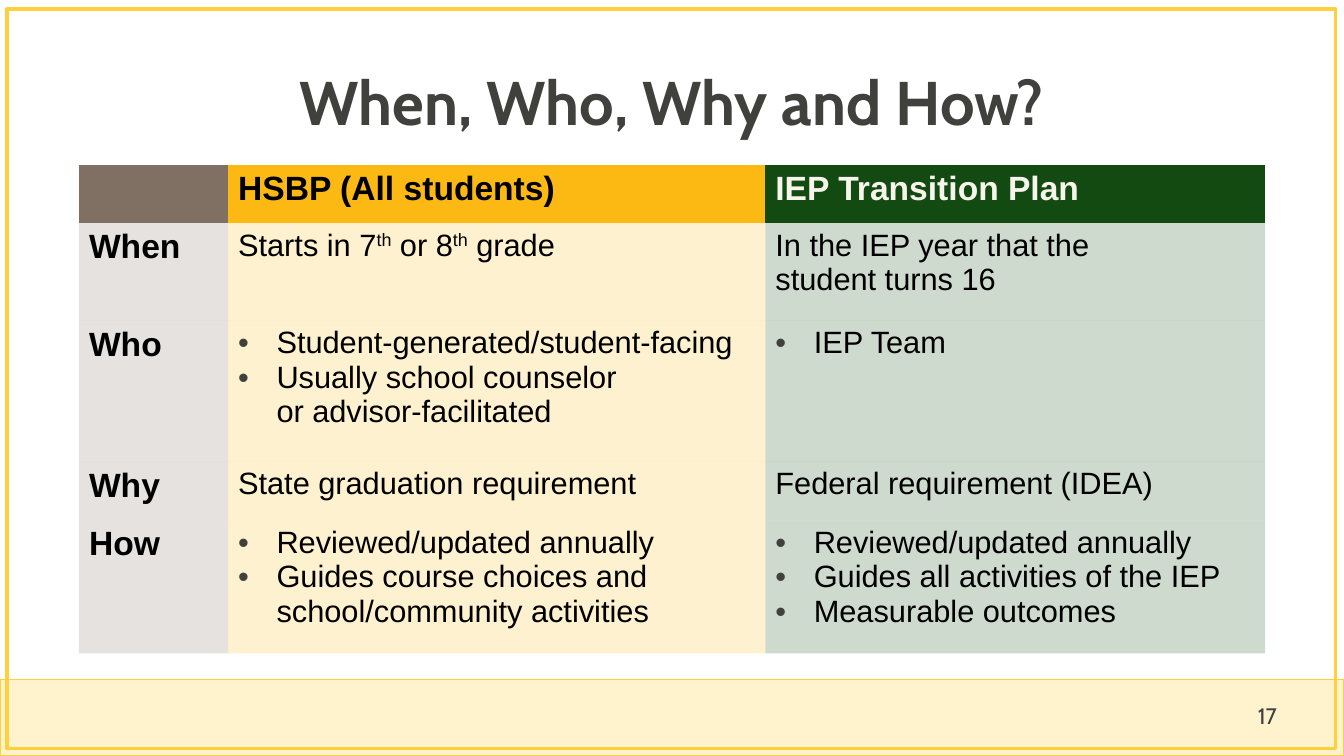
from lxml import etree
from pptx import Presentation
from pptx.dml.color import RGBColor
from pptx.enum.shapes import MSO_SHAPE
from pptx.enum.text import MSO_ANCHOR, PP_ALIGN
from pptx.oxml.ns import qn
from pptx.util import Pt

RECTANGLE = MSO_SHAPE.RECTANGLE
MIDDLE = MSO_ANCHOR.MIDDLE
CENTER, LEFT = PP_ALIGN.CENTER, PP_ALIGN.LEFT

GOLD_LINE = RGBColor(0xFF, 0xCF, 0x3C)
PALE_GOLD = RGBColor(0xFF, 0xF3, 0xCD)
CHARCOAL = RGBColor(0x40, 0x40, 0x3D)
BLACK = RGBColor(0, 0, 0)
IVORY = RGBColor(0xF7, 0xF5, 0xEB)
TAUPE = RGBColor(0x80, 0x70, 0x64)
AMBER = RGBColor(0xFD, 0xB9, 0x13)
GREEN = RGBColor(0x12, 0x4A, 0x12)

HEADING_FONT, TABLE_FONT = "Cabin", "Arial"
HEADER_SIZE, BODY_SIZE = 24, 22
TINT_PERCENT = 20
BULLET_INDENT = 27.4
NO_STYLE = "{2D5ABB26-0587-4C30-8999-92F81FD0307C}"
NBSP = chr(160)

COLUMN_COLORS = [TAUPE, AMBER, GREEN]
COLUMN_WIDTHS = [106.5, 383.8, 357]
ROW_HEIGHTS = [41.8, 69.8, 100.8, 41.8, 95]
HEADERS = [("HSBP (All students)", BLACK), ("IEP Transition Plan", IVORY)]
# A string is a plain paragraph, a tuple alternates normal and raised runs, a list is bulleted.
ROWS = [
    ("When",
     ("Starts in 7", "th", f"{NBSP}or 8", "th", f"{NBSP}grade"),
     f"In the IEP year that the student{NBSP}turns 16"),
    ("Who",
     ["Student-generated/student-facing",
      f"Usually school counselor or{NBSP}advisor-facilitated"],
     ["IEP Team"]),
    ("Why", "State graduation requirement", "Federal requirement (IDEA)"),
    ("How",
     ["Reviewed/updated annually",
      "Guides course choices and school/community activities"],
     ["Reviewed/updated annually", "Guides all activities of the IEP",
      "Measurable outcomes"]),
]


def add_run(paragraph, text, size, color, font_name, bold=False):
    run = paragraph.add_run()
    run.text = text
    run.font.size = Pt(size)
    run.font.name = font_name
    run.font.bold = bold
    run.font.color.rgb = color
    return run


def add_rectangle(slide, box, line_width, fill=None):
    shape = slide.shapes.add_shape(RECTANGLE, *map(Pt, box))
    shape.shadow.inherit = False
    if fill is None:
        shape.fill.background()
    else:
        shape.fill.solid()
        shape.fill.fore_color.rgb = fill
    shape.line.color.rgb = GOLD_LINE
    shape.line.width = Pt(line_width)


def add_label(slide, box, text, size, bold, alignment, line_spacing):
    frame = slide.shapes.add_textbox(*map(Pt, box)).text_frame
    frame.word_wrap = True
    frame.vertical_anchor = MIDDLE
    paragraph = frame.paragraphs[0]
    paragraph.alignment = alignment
    paragraph.line_spacing = line_spacing
    add_run(paragraph, text, size, CHARCOAL, HEADING_FONT, bold)


def fill_cell(cell, color, tinted):
    cell.fill.solid()
    cell.fill.fore_color.rgb = color
    if tinted:
        color_element = cell._tc.tcPr.find(".//" + qn("a:srgbClr"))
        alpha = etree.SubElement(color_element, qn("a:alpha"))
        alpha.set("val", str(TINT_PERCENT * 1000))


def add_bullet(paragraph):
    properties = paragraph._p.get_or_add_pPr()
    properties.set("marL", str(Pt(BULLET_INDENT)))
    properties.set("indent", str(-Pt(BULLET_INDENT)))
    bullet_color = etree.SubElement(properties, qn("a:buClr"))
    etree.SubElement(bullet_color, qn("a:srgbClr")).set("val", str(CHARCOAL))
    etree.SubElement(properties, qn("a:buFont")).set("typeface", TABLE_FONT)
    etree.SubElement(properties, qn("a:buChar")).set("char", "•")


def write_body(cell, content):
    bulleted = isinstance(content, list)
    frame = cell.text_frame
    for index, item in enumerate(content if bulleted else [content]):
        paragraph = frame.add_paragraph() if index else frame.paragraphs[0]
        if bulleted:
            add_bullet(paragraph)
        pieces = item if isinstance(item, tuple) else (item,)
        for position, piece in enumerate(pieces):
            run = add_run(paragraph, piece, BODY_SIZE, BLACK, TABLE_FONT)
            if position % 2:
                run._r.get_or_add_rPr().set("baseline", "30000")


def write_heading(cell, text, color):
    add_run(cell.text_frame.paragraphs[0], text, HEADER_SIZE, color, TABLE_FONT, True)


def add_comparison_table(slide, left, top):
    graphic_frame = slide.shapes.add_table(
        len(ROW_HEIGHTS), len(COLUMN_WIDTHS), Pt(left), Pt(top),
        Pt(sum(COLUMN_WIDTHS)), Pt(sum(ROW_HEIGHTS)))
    table = graphic_frame.table
    table.horz_banding = False
    table._tbl.tblPr.find(qn("a:tableStyleId")).text = NO_STYLE
    for column, width in zip(table.columns, COLUMN_WIDTHS):
        column.width = Pt(width)
    for row_index, (row, height) in enumerate(zip(table.rows, ROW_HEIGHTS)):
        row.height = Pt(height)
        for cell, color in zip(row.cells, COLUMN_COLORS):
            fill_cell(cell, color, tinted=row_index > 0)
    for column_index, (text, color) in enumerate(HEADERS, start=1):
        write_heading(table.cell(0, column_index), text, color)
    for row_index, (label, *contents) in enumerate(ROWS, start=1):
        write_heading(table.cell(row_index, 0), label, BLACK)
        for column_index, content in enumerate(contents, start=1):
            write_body(table.cell(row_index, column_index), content)


def add_backdrop(slide, width, height):
    """Draw the footer band and the frame around the slide."""
    band_height = 54
    add_rectangle(slide, (0, height - band_height - 0.5, width, band_height), 1, PALE_GOLD)
    add_rectangle(slide, (5, 6.5, width - 11, height - 11.5), 2.25)


def main():
    width, height = 960, 540
    presentation = Presentation()
    presentation.slide_width, presentation.slide_height = Pt(width), Pt(height)
    slide = presentation.slides.add_slide(presentation.slide_layouts[6])
    add_backdrop(slide, width, height)
    add_label(slide, (66, 23, 828, 104.4), "When, Who, Why and How?", 44, True, CENTER, 0.9)
    add_comparison_table(slide, 56.4, 117.6)
    add_label(slide, (891.4, 496.8, 50.4, 28.8), "17", 16, False, LEFT, 1)
    presentation.save("out.pptx")


if __name__ == "__main__":
    main()
